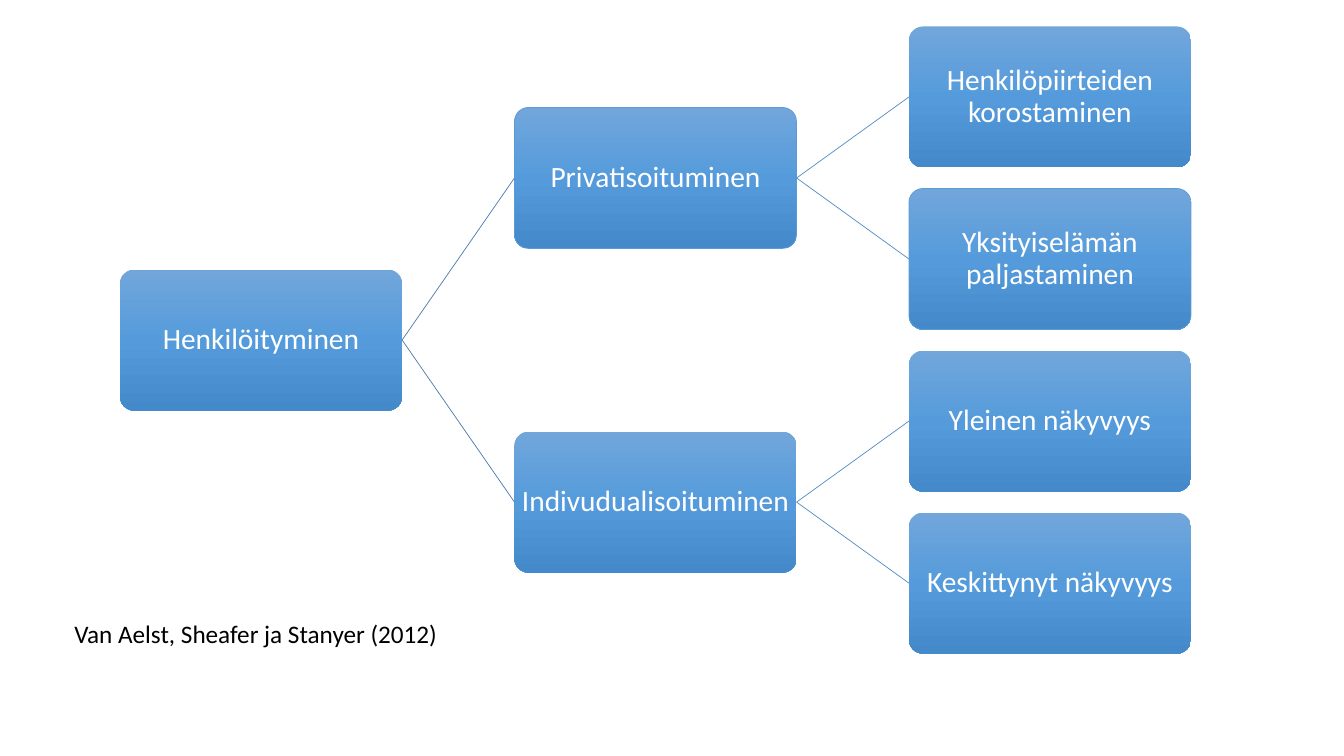
from copy import deepcopy

from lxml import etree
from pptx import Presentation
from pptx.dml.color import RGBColor
from pptx.enum.shapes import MSO_CONNECTOR, MSO_SHAPE
from pptx.enum.text import MSO_ANCHOR, MSO_AUTO_SIZE, PP_ALIGN
from pptx.oxml.ns import qn
from pptx.util import Pt

STRAIGHT = MSO_CONNECTOR.STRAIGHT
ROUNDED = MSO_SHAPE.ROUNDED_RECTANGLE
MIDDLE = MSO_ANCHOR.MIDDLE
CENTER = PP_ALIGN.CENTER
FIT_SHAPE = MSO_AUTO_SIZE.SHAPE_TO_FIT_TEXT
LEFT_SIDE, RIGHT_SIDE = 1, 3

FONT = "Calibri"
GRADIENT = [(0, "71A6DB"), (0.5, "559BDB"), (1, "448ACA")]
OUTLINE = "5B9BD5"
BOX_WIDTH, BOX_HEIGHT = 201.5, 100.75
TREE_LEFT, TREE_TOP = 85.75, 18.9
COLUMN_STEP, ROW_STEP = 281.75, 115.75

# name: (column, row, outlined)
TOPICS = {
    "Henkilöityminen": (0, 1.5, False),
    "Privatisoituminen": (1, 0.5, True),
    "Henkilöpiirteiden korostaminen": (2, 0, False),
    "Yksityiselämän paljastaminen": (2, 1, True),
    "Indivudualisoituminen": (1, 2.5, False),
    "Yleinen näkyvyys": (2, 2, False),
    "Keskittynyt näkyvyys": (2, 3, False),
}
BRANCHES = {
    "Henkilöityminen": ("497CAB", ["Privatisoituminen", "Indivudualisoituminen"]),
    "Privatisoituminen": (
        "538DC1",
        ["Henkilöpiirteiden korostaminen", "Yksityiselämän paljastaminen"],
    ),
    "Indivudualisoituminen": ("538DC1", ["Yleinen näkyvyys", "Keskittynyt näkyvyys"]),
}


def color(hex_string):
    """Turn a hex string into a colour."""
    return RGBColor.from_string(hex_string)


def apply_format(target, values):
    """Set each attribute named in values on the target."""
    for name, value in values.items():
        setattr(target, name, value)


def write_text(frame, text, size, text_color):
    """Write one formatted paragraph into a text frame and return it."""
    para = frame.paragraphs[0]
    span = para.add_run()
    apply_format(span, {"text": text})
    apply_format(span.font, {"name": FONT, "size": Pt(size)})
    span.font.color.rgb = color(text_color)
    return para


def fill_gradient(shape):
    """Fill a shape with the downward blue gradient."""
    shape.fill.gradient()
    shape.fill.gradient_angle = 270
    stop_list = next(shape._element.iter(qn("a:gsLst")))
    stop_list.insert(1, deepcopy(stop_list[0]))
    for stop, (position, stop_color) in zip(shape.fill.gradient_stops, GRADIENT):
        stop.position = position
        stop.color.rgb = color(stop_color)


def add_topic(page, text, column, row, outlined):
    """Add a rounded topic box at its place in the tree."""
    left = TREE_LEFT + column * COLUMN_STEP
    top = TREE_TOP + row * ROW_STEP
    box = page.shapes.add_shape(
        ROUNDED, Pt(left), Pt(top), Pt(BOX_WIDTH), Pt(BOX_HEIGHT)
    )
    box.adjustments[0] = 0.1
    box.shadow.inherit = False
    fill_gradient(box)
    if outlined:
        box.line.color.rgb = color(OUTLINE)
        box.line.width = Pt(0.5)
    else:
        box.line.fill.background()
    sides = ("left", "top", "right", "bottom")
    apply_format(box.text_frame, {f"margin_{side}": Pt(1) for side in sides})
    apply_format(box.text_frame, {"word_wrap": True, "vertical_anchor": MIDDLE})
    para = write_text(box.text_frame, text, 21, "FFFFFF")
    apply_format(para, {"alignment": CENTER, "line_spacing": 0.9})
    return box


def add_branch(page, parent, child, line_color):
    """Join the right side of a parent to the left side of its child."""
    branch = page.shapes.add_connector(STRAIGHT, 0, 0, 0, 0)
    branch.begin_connect(parent, RIGHT_SIDE)
    branch.end_connect(child, LEFT_SIDE)
    branch.line.color.rgb = color(line_color)
    branch.line.width = Pt(0.5)
    etree.SubElement(branch._element.spPr, qn("a:effectLst"))


def add_citation(page, text):
    """Add the source citation below the tree."""
    box = page.shapes.add_textbox(Pt(46), Pt(437.8), Pt(278.6), Pt(29))
    apply_format(box.text_frame, {"word_wrap": False, "auto_size": FIT_SHAPE})
    write_text(box.text_frame, text, 18, "000000")


def main():
    """Build the topic tree slide and save it."""
    deck = Presentation()
    apply_format(deck, {"slide_width": Pt(960), "slide_height": Pt(540)})
    page = deck.slides.add_slide(deck.slide_layouts[6])
    boxes = {text: add_topic(page, text, *place) for text, place in TOPICS.items()}
    for parent, (line_color, children) in BRANCHES.items():
        for child in children:
            add_branch(page, boxes[parent], boxes[child], line_color)
    add_citation(page, "Van Aelst, Sheafer ja Stanyer (2012)")
    deck.save("out.pptx")


if __name__ == "__main__":
    main()
